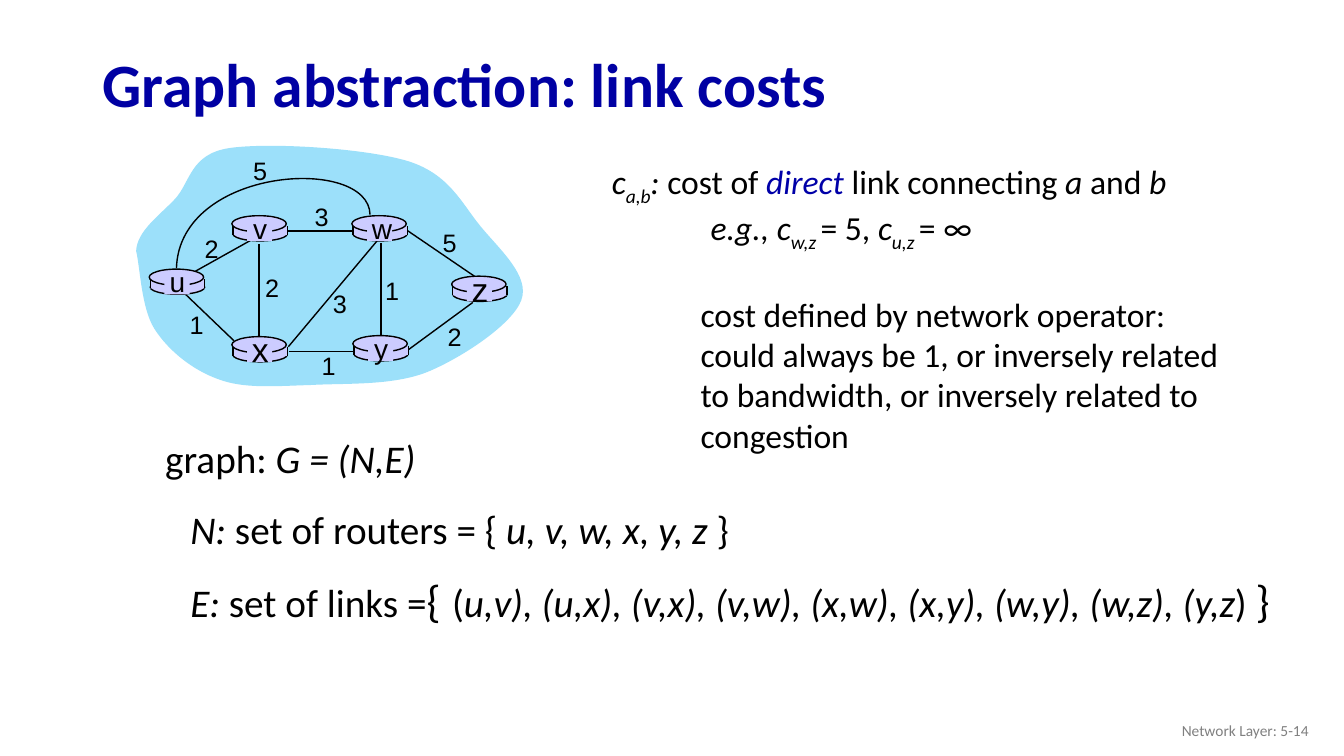
from lxml import etree
from pptx import Presentation
from pptx.dml.color import RGBColor
from pptx.enum.shapes import MSO_CONNECTOR, MSO_SHAPE
from pptx.enum.text import MSO_ANCHOR, PP_ALIGN
from pptx.oxml.ns import qn
from pptx.util import Inches, Pt

COLORS = {"title": "0000A3", "accent": "0000A8", "black": "000000", "gray": "808080",
          "cloud": "9CE0FA", "router": "CCCCFF"}
COLORS = {name: RGBColor.from_string(value) for name, value in COLORS.items()}
STRAIGHT = MSO_CONNECTOR.STRAIGHT
OVAL, RECT = MSO_SHAPE.OVAL, MSO_SHAPE.RECTANGLE
TOP, MIDDLE = MSO_ANCHOR.TOP, MSO_ANCHOR.MIDDLE
LEFT, CENTER, RIGHT = PP_ALIGN.LEFT, PP_ALIGN.CENTER, PP_ALIGN.RIGHT
ITALIC = {"italic": True}
SUB = {"italic": True, "sub": True}

prs = Presentation()
prs.slide_width, prs.slide_height = Inches(13.33), Inches(7.5)
s = prs.slides.add_slide(prs.slide_layouts[6])


def add_text(box, paragraphs, size, font="Calibri", color="black", bold=False,
             align=LEFT, anchor=TOP, wrap=False):
    """Each paragraph is a list of (text, style) runs."""
    tf = s.shapes.add_textbox(*map(Inches, box)).text_frame
    tf.word_wrap, tf.vertical_anchor = wrap, anchor
    for i, runs in enumerate(paragraphs):
        p = tf.add_paragraph() if i else tf.paragraphs[0]
        p.alignment = align
        for text, style in runs:
            r = p.add_run()
            r.text = text
            r.font.name, r.font.bold = font, bold
            r.font.size = Pt(style.get("size", size))
            r.font.italic = style.get("italic", False)
            r.font.color.rgb = COLORS[style.get("color", color)]
            if style.get("sub"):
                r._r.get_or_add_rPr().set("baseline", "-25000")
    return tf


def add_line(x1, y1, x2, y2):
    line = s.shapes.add_connector(STRAIGHT, *map(Inches, (x1, y1, x2, y2)))
    line.line.color.rgb, line.line.width = COLORS["black"], Pt(1)
    etree.SubElement(line._element.spPr, qn("a:effectLst"))


# Title and footer
tf = add_text((0.92, 0.38, 7.5, 0.98), [[("Graph abstraction: link costs", {})]], 44,
              color="title", bold=True, anchor=MIDDLE, wrap=True)
tf.paragraphs[0].line_spacing = 0.9
add_text((10.08, 7.05, 3, 0.4), [[("Network Layer: 5-14", {})]], 11,
         color="gray", align=RIGHT, anchor=MIDDLE, wrap=True)

# Network cloud and the curved link u-w, in hundredths of an inch:
# a start point, then two control points and an end point per curve
CLOUD = [(135, 249),
         (136, 229), (158, 214), (174, 197), (189, 180), (189, 153), (227, 147),
         (266, 141), (363, 147), (405, 160), (446, 173), (458, 202), (477, 225),
         (496, 248), (526, 274), (517, 298), (508, 322), (458, 355), (424, 369),
         (389, 383), (342, 380), (308, 382), (273, 383), (242, 386), (216, 376),
         (191, 367), (167, 348), (153, 326), (140, 305), (139, 265), (135, 249)]
ARC = [(367, 213), (366, 154), (178, 165), (175, 266)]
for points, closed in ((CLOUD, True), (ARC, False)):
    builder = s.shapes.build_freeform(*points[0], scale=Inches(0.01))
    builder.add_line_segments(points[1:], close=closed)
    sp = builder.convert_to_shape()
    sp.shadow.inherit = False
    # Turn every three line segments into one cubic curve
    segments = list(sp._element.iter(qn("a:lnTo")))
    for i in range(0, len(segments), 3):
        curve = etree.Element(qn("a:cubicBezTo"))
        segments[i].addprevious(curve)
        for segment in segments[i:i + 3]:
            curve.append(segment[0])
            segment.getparent().remove(segment)
    if closed:
        sp.fill.solid()
        sp.fill.fore_color.rgb = COLORS["cloud"]
        sp.line.fill.background()
    else:
        sp.fill.background()
        sp.line.color.rgb, sp.line.width = COLORS["black"], Pt(1)

# Straight links
LINKS = [(1.94, 2.69, 2.53, 2.36), (3.78, 2.41, 3.78, 3.32), (2.57, 2.42, 2.57, 3.35),
         (2.86, 3.44, 3.74, 2.39), (4.05, 3.47, 4.69, 3), (3.51, 3.49, 2.87, 3.49),
         (2.32, 3.38, 1.84, 2.92), (3.5, 2.29, 2.86, 2.29), (4.72, 2.75, 4.03, 2.28)]
for link in LINKS:
    add_line(*link)

# Routers: name, left, top, letter size
ROUTERS = [("u", 1.48, 2.67, 20), ("v", 2.3, 2.14, 20), ("w", 3.49, 2.14, 20),
           ("x", 2.3, 3.34, 24), ("y", 3.5, 3.33, 20), ("z", 4.48, 2.74, 24)]
# Parts of a router, relative to its corner: shape, box, outlined
PARTS = [(OVAL, (0.01, 0.11, 0.54, 0.14), True), (RECT, (0.01, 0.1, 0.54, 0.09), False),
         (OVAL, (0, 0, 0.54, 0.16), True), (RECT, (0.15, 0.02, 0.25, 0.23), False)]
for name, x, y, size in ROUTERS:
    for kind, (dx, dy, w, h), outlined in PARTS:
        sp = s.shapes.add_shape(kind, *map(Inches, (x + dx, y + dy, w, h)))
        sp.shadow.inherit = False
        sp.fill.solid()
        sp.fill.fore_color.rgb = COLORS["router"]
        if outlined:
            sp.line.color.rgb, sp.line.width = COLORS["black"], Pt(1)
        else:
            sp.line.fill.background()
    for side in (x + 0.01, x + 0.55):
        add_line(side, y + 0.1, side, y + 0.19)
    add_text((x + 0.1, y - 0.09, 0.36, 0.43), [[(name, {})]], size,
             font="Arial", align=CENTER, anchor=MIDDLE)

# Link costs: value, left, top
COSTS = [("2", 1.93, 2.27), ("2", 2.53, 2.65), ("1", 1.78, 3.02), ("3", 3.2, 2.81),
         ("1", 3.09, 3.43), ("1", 3.72, 2.68), ("2", 4.34, 3.14), ("5", 4.29, 2.21),
         ("3", 3.02, 1.95), ("5", 2.41, 1.49)]
for cost, x, y in COSTS:
    add_text((x, y, 0.34, 0.4), [[(cost, {})]], 18, font="Arial", align=CENTER)

# Cost definition
tf = add_text((5.97, 1.55, 6.44, 2.93), [
    [("c", ITALIC), ("a,b", SUB), (": ", ITALIC), ("cost of ", {}),
     ("direct", {"italic": True, "color": "accent"}), (" link connecting ", {}),
     ("a", ITALIC), (" and ", {}), ("b", ITALIC)],
    [("e.g., c", ITALIC), ("w,z ", SUB), ("= 5, ", {}),
     ("c", ITALIC), ("u,z ", SUB), ("= ∞", {})],
    [("cost defined by network operator: could always be 1, or inversely related "
      "to bandwidth, or inversely related to congestion", {})],
], 24, wrap=True)
example, note = tf.paragraphs[1:]
for p, indent in ((example, 0.98), (note, 0.88)):
    p._p.get_or_add_pPr().set("marL", str(Inches(indent)))
note.space_before = Pt(29)

# Graph, node set and link set
add_text((1.54, 4.26, 2.71, 1.04), [[("graph: ", {}), ("G = (N,E)", ITALIC)]], 28)
add_text((1.79, 4.96, 5.59, 0.57), [
    [("N: ", ITALIC), ("set of routers = { ", {}), ("u, v, w, x, y, z ", ITALIC), ("}", {})]], 28)
add_text((1.79, 5.58, 11.02, 0.71), [
    [("E: ", ITALIC), ("set of links =", {}), ("{", {"size": 32}), (" ", {"size": 36}), ("(", {}),
     ("u,v), (u,x), (v,x), (v,w), (x,w), (x,y), (w,y), (w,z), (y,z", ITALIC),
     (") ", {}), ("}", {"size": 32})]], 28)

prs.save("out.pptx")
